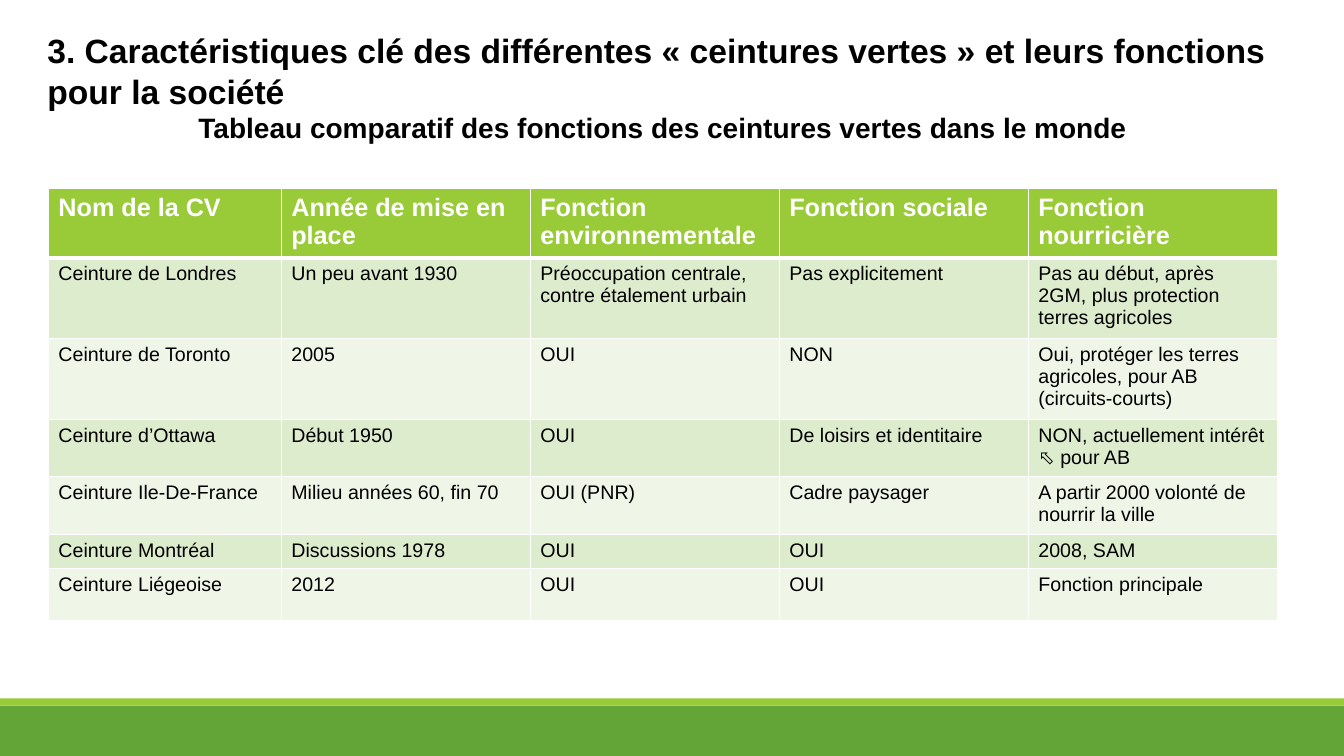
from dataclasses import dataclass

from lxml import etree
from pptx import Presentation
from pptx import util as u
from pptx.dml.color import RGBColor
from pptx.enum import shapes, text
from pptx.oxml.ns import qn


@dataclass(frozen=True)
class Theme:
    font: str = "Arial"
    ink: str = "000000"
    white: str = "FFFFFF"
    leaf: str = "99CB38"
    forest: str = "63A537"
    bands: tuple = ("DEECCE", "EFF6E8")
    title: int = 24
    subtitle: int = 20
    header: int = 18
    body: int = 14
    rule: int = 1
    header_rule: int = 3


theme = Theme()


def style(para, size, color, bold):
    for span in para.runs:
        span.font.name = theme.font
        span.font.size = u.Pt(size)
        span.font.bold = bold
        span.font.color.rgb = RGBColor.from_string(color)


def add_border(cell, side, width):
    line = etree.SubElement(cell._tc.get_or_add_tcPr(), qn(f"a:{side}"), w=str(u.Pt(width)))
    fill = etree.SubElement(line, qn("a:solidFill"))
    etree.SubElement(fill, qn("a:srgbClr"), val=theme.white)


deck = Presentation()
deck.slide_width = u.Inches(13.33)
deck.slide_height = u.Inches(7.5)
page = deck.slides.add_slide(deck.slide_layouts[5])

footer_bands = [(7, 0.5, theme.forest), (6.93, 0.07, theme.leaf)]
for top, height, color in footer_bands:
    band = page.shapes.add_shape(
        shapes.MSO_SHAPE.RECTANGLE, 0, u.Inches(top), deck.slide_width, u.Inches(height)
    )
    band.shadow.inherit = False
    band.fill.solid()
    band.fill.fore_color.rgb = RGBColor.from_string(color)
    band.line.fill.background()

heading = page.shapes.title
heading.left, heading.top = u.Inches(0.37), u.Inches(0.25)
heading.width, heading.height = u.Inches(12.41), u.Inches(1.25)
frame = heading.text_frame
frame.text = (
    "3. Caractéristiques clé des différentes « ceintures vertes » et leurs fonctions pour la société\n"
    "Tableau comparatif des fonctions des ceintures vertes dans le monde"
)
frame.word_wrap = True
frame.auto_size = text.MSO_AUTO_SIZE.NONE
frame.vertical_anchor = text.MSO_ANCHOR.TOP
heading_styles = [
    (theme.title, text.PP_ALIGN.LEFT),
    (theme.subtitle, text.PP_ALIGN.CENTER),
]
for para, (size, alignment) in zip(frame.paragraphs, heading_styles):
    para.alignment = alignment
    style(para, size, theme.ink, True)

belts = [
    ("Nom de la CV", "Année de mise en place", "Fonction environnementale",
     "Fonction sociale", "Fonction nourricière"),
    ("Ceinture de Londres", "Un peu avant 1930", "Préoccupation centrale, contre étalement urbain",
     "Pas explicitement", "Pas au début, après 2GM, plus protection terres agricoles"),
    ("Ceinture de Toronto", "2005", "OUI", "NON",
     "Oui, protéger les terres agricoles, pour AB (circuits-courts)"),
    ("Ceinture d’Ottawa", "Début 1950", "OUI", "De loisirs et identitaire",
     "NON, actuellement intérêt ⬁ pour AB"),
    ("Ceinture Ile-De-France", "Milieu années 60, fin 70", "OUI (PNR)", "Cadre paysager",
     "A partir 2000 volonté de nourrir la ville"),
    ("Ceinture Montréal", "Discussions 1978", "OUI", "OUI", "2008, SAM"),
    ("Ceinture Liégeoise", "2012", "OUI", "OUI", "Fonction principale"),
]
column_widths = [2.31] + [2.47] * 4
row_heights = [0.69, 0.8, 0.8, 0.57, 0.57, 0.34, 0.52]

table = page.shapes.add_table(
    len(belts), len(column_widths), u.Inches(0.48), u.Inches(1.87),
    u.Inches(sum(column_widths)), u.Inches(sum(row_heights)),
).table
for column, width in zip(table.columns, column_widths):
    column.width = u.Inches(width)
for row, height in zip(table.rows, row_heights):
    row.height = u.Inches(height)

for r, belt in enumerate(belts):
    is_header = r == 0
    fill = theme.leaf if is_header else theme.bands[(r - 1) % 2]
    size = theme.header if is_header else theme.body
    color = theme.white if is_header else theme.ink
    top_rule = theme.header_rule if r == 1 else theme.rule
    bottom_rule = theme.header_rule if is_header else theme.rule
    borders = {"lnL": theme.rule, "lnR": theme.rule, "lnT": top_rule, "lnB": bottom_rule}
    for c, words in enumerate(belt):
        cell = table.cell(r, c)
        cell.text_frame.text = words
        style(cell.text_frame.paragraphs[0], size, color, is_header)
        for side, width in borders.items():
            add_border(cell, side, width)
        cell.fill.solid()
        cell.fill.fore_color.rgb = RGBColor.from_string(fill)

deck.save("out.pptx")
